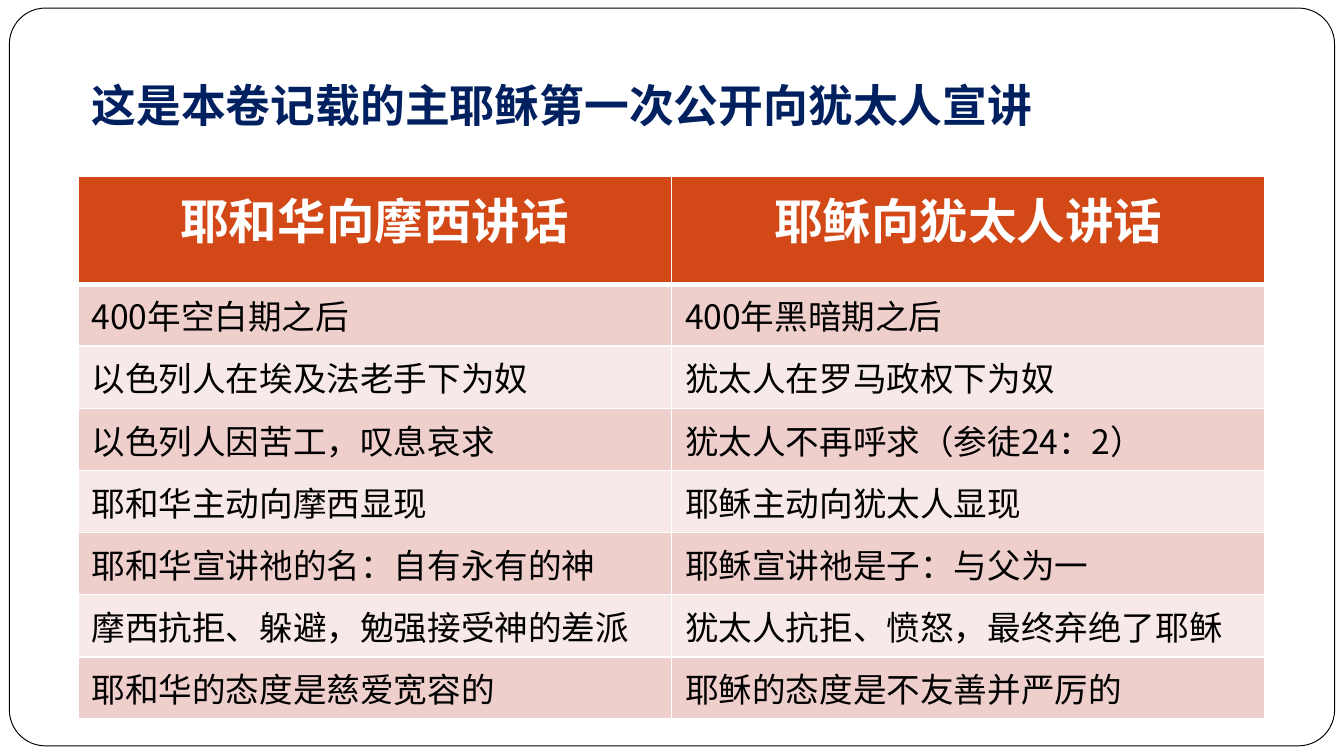
"""Build a slide contrasting the LORD speaking to Moses with Jesus speaking to the Jews."""
from typing import NamedTuple

from lxml import etree
from pptx import Presentation
from pptx.dml.color import RGBColor
from pptx.enum.shapes import MSO_SHAPE
from pptx.enum.text import MSO_ANCHOR, MSO_AUTO_SIZE, PP_ALIGN
from pptx.oxml.ns import qn
from pptx.util import Pt

ROUNDED = MSO_SHAPE.ROUNDED_RECTANGLE
BOTTOM = MSO_ANCHOR.BOTTOM
NO_FIT = MSO_AUTO_SIZE.NONE
LEFT, CENTER = PP_ALIGN.LEFT, PP_ALIGN.CENTER

FONT = "Noto Sans CJK SC"
WHITE = RGBColor(0xFF, 0xFF, 0xFF)
BLACK = RGBColor(0x00, 0x00, 0x00)
NAVY = RGBColor(0x00, 0x20, 0x60)
ORANGE = RGBColor(0xD3, 0x48, 0x17)
BANDS = (RGBColor(0xEF, 0xCF, 0xCC), RGBColor(0xF7, 0xE9, 0xE8))
HEADER_H, ROW_H, COL_W = 57.6, 31.4, 318


class Contrast(NamedTuple):
    moses: str
    jews: str


HEADER = Contrast("耶和华向摩西讲话", "耶稣向犹太人讲话")
CONTRASTS = (
    Contrast("400年空白期之后", "400年黑暗期之后"),
    Contrast("以色列人在埃及法老手下为奴", "犹太人在罗马政权下为奴"),
    Contrast("以色列人因苦工，叹息哀求", "犹太人不再呼求（参徒24：2）"),
    Contrast("耶和华主动向摩西显现", "耶稣主动向犹太人显现"),
    Contrast("耶和华宣讲祂的名：自有永有的神", "耶稣宣讲祂是子：与父为一"),
    Contrast("摩西抗拒、躲避，勉强接受神的差派", "犹太人抗拒、愤怒，最终弃绝了耶稣"),
    Contrast("耶和华的态度是慈爱宽容的", "耶稣的态度是不友善并严厉的"),
)


def write(tf, text: str, *, size: float, color: RGBColor, bold=False, align=LEFT) -> None:
    p = tf.paragraphs[0]
    p.alignment = align
    r = p.add_run()
    r.text = text
    r.font.size = Pt(size)
    r.font.bold = bold
    r.font.color.rgb = color
    r.font.name = FONT
    etree.SubElement(r._r.get_or_add_rPr(), qn("a:ea"), typeface=FONT)


def set_borders(cell, *, top: float = 1, bottom: float = 1) -> None:
    tc_pr = cell._tc.get_or_add_tcPr()
    widths = {"a:lnL": 1, "a:lnR": 1, "a:lnT": top, "a:lnB": bottom}
    for i, (tag, width) in enumerate(widths.items()):
        ln = etree.Element(qn(tag), w=str(Pt(width)))
        fill = etree.SubElement(ln, qn("a:solidFill"))
        etree.SubElement(fill, qn("a:srgbClr"), val=str(WHITE))
        tc_pr.insert(i, ln)


def add_frame(slide) -> None:
    sp = slide.shapes.add_shape(ROUNDED, Pt(5), Pt(4.3), Pt(710), Pt(395.3))
    sp.adjustments[0] = 0.049
    sp.shadow.inherit = False
    sp.fill.solid()
    sp.fill.fore_color.rgb = WHITE
    sp.line.color.rgb = BLACK
    sp.line.width = Pt(0.5)
    slide.shapes._spTree.insert(2, sp._element)


def add_title(slide, text: str) -> None:
    sp = slide.shapes.title
    sp.left, sp.top, sp.width, sp.height = Pt(41.8), Pt(22.3), Pt(612), Pt(55.4)
    tf = sp.text_frame
    tf.auto_size = NO_FIT
    tf.vertical_anchor = BOTTOM
    tf.margin_left = tf.margin_right = tf.margin_bottom = Pt(7.2)
    tf.margin_top = Pt(3.6)
    write(tf, text, size=24, color=NAVY, bold=True)


def add_contrasts(slide, header: Contrast, rows: tuple[Contrast, ...]) -> None:
    height = HEADER_H + len(rows) * ROW_H
    frame = slide.shapes.add_table(len(rows) + 1, len(header), Pt(41.8), Pt(94.6),
                                   Pt(COL_W * len(header)), Pt(height))
    table = frame.table
    for col in table.columns:
        col.width = Pt(COL_W)
    for i, contrast in enumerate((header, *rows)):
        table.rows[i].height = Pt(ROW_H if i else HEADER_H)
        for j, text in enumerate(contrast):
            cell = table.cell(i, j)
            cell.fill.solid()
            cell.fill.fore_color.rgb = BANDS[(i - 1) % 2] if i else ORANGE
            set_borders(cell, top=3 if i == 1 else 1, bottom=1 if i else 3)
            if i:
                write(cell.text_frame, text, size=18, color=BLACK)
            else:
                write(cell.text_frame, text, size=26, color=WHITE, bold=True, align=CENTER)


def main() -> None:
    prs = Presentation()
    prs.slide_width, prs.slide_height = Pt(720), Pt(405)
    slide = prs.slides.add_slide(prs.slide_layouts[5])
    add_frame(slide)
    add_title(slide, "这是本卷记载的主耶稣第一次公开向犹太人宣讲")
    add_contrasts(slide, HEADER, CONTRASTS)
    prs.save("out.pptx")


if __name__ == "__main__":
    main()
